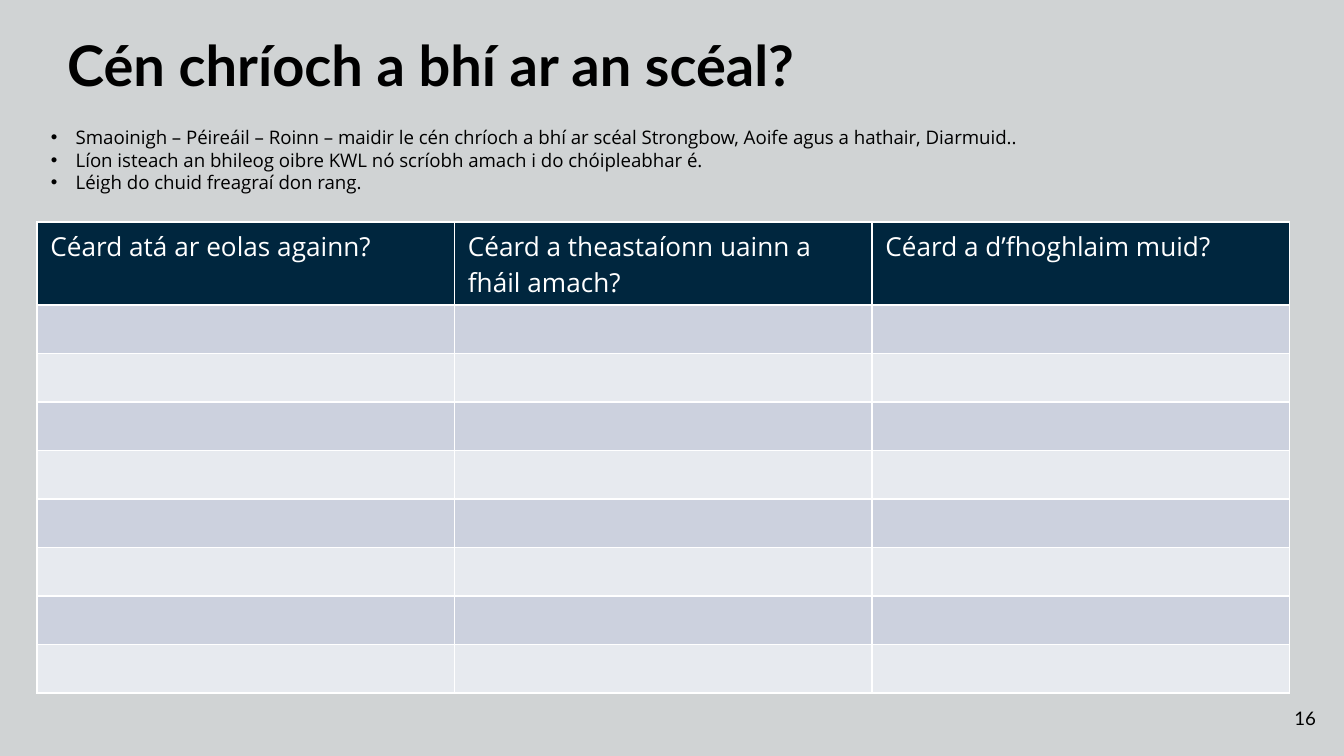
from lxml import etree
from pptx import Presentation
from pptx.dml.color import RGBColor
from pptx.enum.text import MSO_ANCHOR, MSO_AUTO_SIZE, PP_ALIGN
from pptx.oxml.ns import qn
from pptx.util import Pt

PX = 4572
TOP, MIDDLE = MSO_ANCHOR.TOP, MSO_ANCHOR.MIDDLE
LEFT, RIGHT = PP_ALIGN.LEFT, PP_ALIGN.RIGHT
NO_FIT = MSO_AUTO_SIZE.NONE


def rgb(color):
    return RGBColor.from_string(color)


def add_run(paragraph, text, font, size, color="000000", bold=False):
    run = paragraph.add_run()
    run.text = text
    run.font.name = font
    run.font.size = Pt(size)
    run.font.color.rgb = rgb(color)
    run.font.bold = bold


prs = Presentation()
prs.slide_width, prs.slide_height = 2000 * PX, 1125 * PX
slide = prs.slides.add_slide(prs.slide_layouts[5])
slide.background.fill.solid()
slide.background.fill.fore_color.rgb = rgb("D0D3D4")

heading = slide.shapes.title
heading.left, heading.top, heading.width, heading.height = 80 * PX, 26 * PX, 1564 * PX, 134 * PX
page_number = slide.shapes.add_textbox(1858 * PX, 1026 * PX, 120 * PX, 86 * PX)

for shape, text, size, bold, anchor, align in [
    (heading, "Cén chríoch a bhí ar an scéal?", 30, True, TOP, LEFT),
    (page_number, "16", 10, False, MIDDLE, RIGHT),
]:
    frame = shape.text_frame
    frame.word_wrap = True
    frame.auto_size = NO_FIT
    frame.vertical_anchor = anchor
    frame.margin_left = frame.margin_right = 20 * PX
    frame.margin_top = frame.margin_bottom = 20 * PX
    frame.paragraphs[0].alignment = align
    add_run(frame.paragraphs[0], text, "Lato", size, bold=bold)

tasks = [
    "Smaoinigh – Péireáil – Roinn – maidir le cén chríoch a bhí ar scéal Strongbow, Aoife agus a hathair, Diarmuid..",
    "Líon isteach an bhileog oibre KWL nó scríobh amach i do chóipleabhar é.",
    "Léigh do chuid freagraí don rang.",
]
instructions = slide.shapes.add_textbox(56 * PX, 178 * PX, 1612 * PX, 202 * PX).text_frame
instructions.word_wrap = True
for index, task in enumerate(tasks):
    paragraph = instructions.add_paragraph() if index else instructions.paragraphs[0]
    properties = paragraph._p.get_or_add_pPr()
    properties.set("marL", str(37 * PX))
    properties.set("indent", str(-37 * PX))
    etree.SubElement(properties, qn("a:buFont")).set("typeface", "Arial")
    etree.SubElement(properties, qn("a:buChar")).set("char", "•")
    add_run(paragraph, task, "Open Sans", 10)

questions = [
    "Céard atá ar eolas againn?",
    "Céard a theastaíonn uainn a fháil amach?",
    "Céard a d’fhoghlaim muid?",
]
kwl = slide.shapes.add_table(9, 3, 55 * PX, 330 * PX, 1864 * PX, 702 * PX).table
for column in kwl.columns:
    column.width = 1864 * PX // 3
for row_index, row in enumerate(kwl.rows):
    row.height = 578 * PX // 8 if row_index else 124 * PX
    for column_index, cell in enumerate(row.cells):
        paragraph = cell.text_frame.paragraphs[0]
        if row_index == 0:
            fill = "00263E"
            add_run(paragraph, questions[column_index], "Open Sans", 14, "FFFFFF")
        else:
            fill = "CCD1DE" if row_index % 2 else "E7EAEF"
            etree.SubElement(paragraph._p, qn("a:endParaRPr")).set("sz", "1200")
        cell_properties = cell._tc.get_or_add_tcPr()
        for side in "LRTB":
            border = etree.SubElement(cell_properties, qn(f"a:ln{side}"), w=str(Pt(1)))
            border_fill = etree.SubElement(border, qn("a:solidFill"))
            etree.SubElement(border_fill, qn("a:srgbClr"), val="FFFFFF")
        cell.fill.solid()
        cell.fill.fore_color.rgb = rgb(fill)

prs.save("out.pptx")
